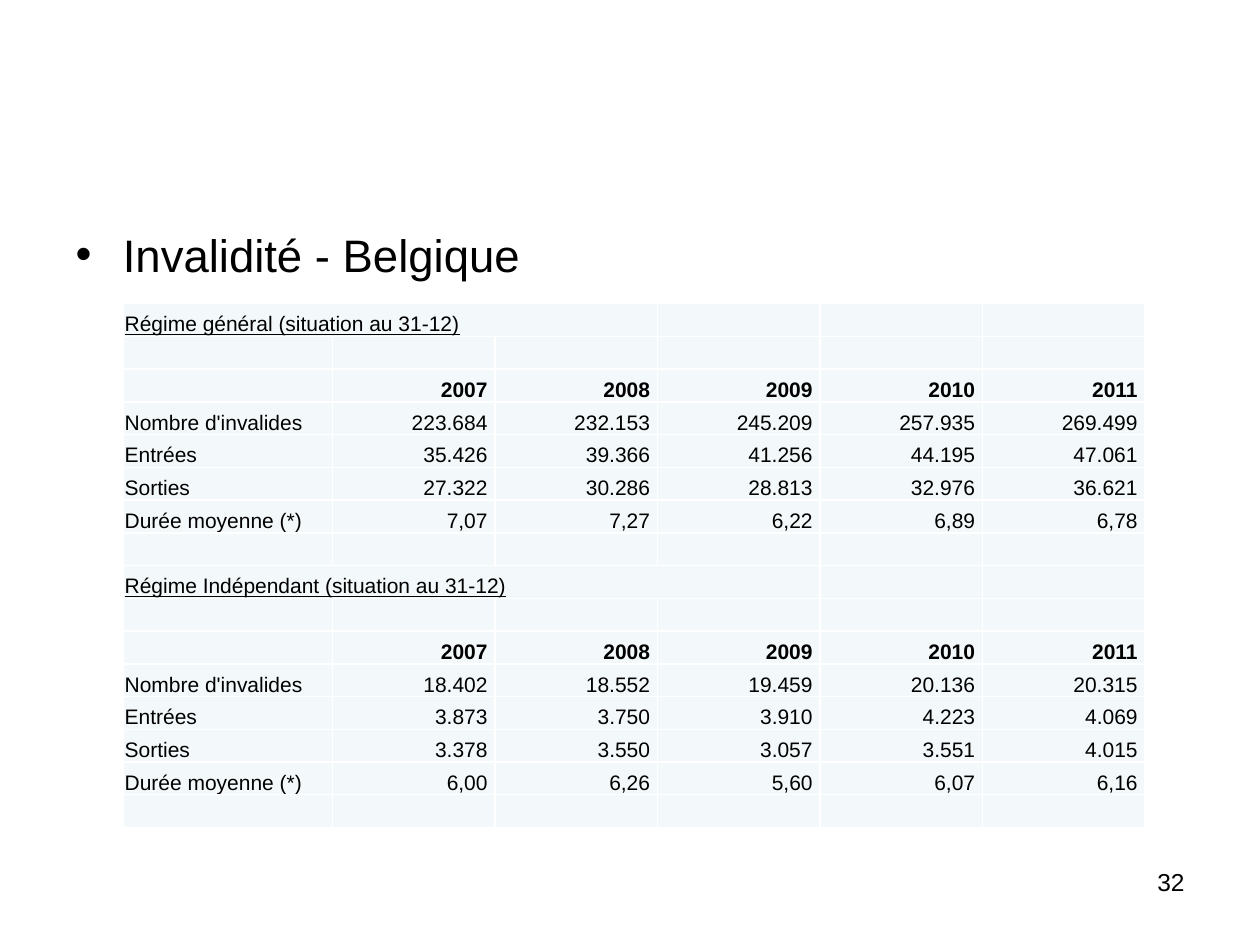
from lxml import etree
from pptx import Presentation
from pptx.dml.color import RGBColor
from pptx.enum.text import MSO_ANCHOR, PP_ALIGN
from pptx.oxml.ns import qn
from pptx.util import Inches, Pt

BLACK = RGBColor(0x00, 0x00, 0x00)
WHITE = RGBColor(0xFF, 0xFF, 0xFF)
PALE_BLUE = RGBColor(0xF3, 0xF9, 0xFA)
RIGHT = PP_ALIGN.RIGHT
BOTTOM = MSO_ANCHOR.BOTTOM
TITLE_AND_CONTENT = 1

FONT = "Arial"
TABLE_SIZE = 12
COLUMN_WIDTHS = [1.66] + [1.29] * 5
ROW_HEIGHT = 0.26
YEARS = ["2007", "2008", "2009", "2010", "2011"]
MEASURES = ["Nombre d'invalides", "Entrées", "Sorties", "Durée moyenne (*)"]

# Heading, number of columns the heading spans, one row of values per measure
SCHEMES = [
    ("Régime général (situation au 31-12)", 3, [
        ["223.684", "232.153", "245.209", "257.935", "269.499"],
        ["35.426", "39.366", "41.256", "44.195", "47.061"],
        ["27.322", "30.286", "28.813", "32.976", "36.621"],
        ["7,07", "7,27", "6,22", "6,89", "6,78"],
    ]),
    ("Régime Indépendant (situation au 31-12)", 4, [
        ["18.402", "18.552", "19.459", "20.136", "20.315"],
        ["3.873", "3.750", "3.910", "4.223", "4.069"],
        ["3.378", "3.550", "3.057", "3.551", "4.015"],
        ["6,00", "6,26", "5,60", "6,07", "6,16"],
    ]),
]
ROWS_PER_SCHEME = len(MEASURES) + 4  # heading, blank, years, measures, blank


def set_font(paragraph, size, bold=False, underline=False):
    font = paragraph.font
    font.name = FONT
    font.size = Pt(size)
    font.bold = bold
    font.underline = underline
    font.color.rgb = BLACK


def add_bullet_heading(slide, text):
    body = slide.placeholders[1]
    body.left, body.top = Inches(0.5), Inches(1.75)
    body.width, body.height = Inches(9), Inches(4.95)
    body.text_frame.text = text
    set_font(body.text_frame.paragraphs[0], 26)


def add_page_number(slide, text):
    box = slide.shapes.add_textbox(
        Inches(7.17), Inches(6.83), Inches(2.33), Inches(0.52))
    box.text_frame.word_wrap = True
    paragraph = box.text_frame.paragraphs[0]
    paragraph.text = text
    paragraph.alignment = RIGHT
    set_font(paragraph, 14)


def add_borders(cell):
    properties = cell._tc.get_or_add_tcPr()
    for side in ("a:lnL", "a:lnR", "a:lnT", "a:lnB"):
        line = etree.SubElement(properties, qn(side), w=str(Pt(1)))
        fill = etree.SubElement(line, qn("a:solidFill"))
        etree.SubElement(fill, qn("a:srgbClr"), val=str(WHITE))


def format_blank_cell(cell):
    """Border and fill a cell, with a text size that keeps empty rows low."""
    add_borders(cell)
    cell.fill.solid()
    cell.fill.fore_color.rgb = PALE_BLUE
    cell.vertical_anchor = BOTTOM
    cell.margin_left = cell.margin_right = cell.margin_top = Inches(0.01)
    cell.margin_bottom = 0
    etree.SubElement(cell.text_frame.paragraphs[0]._p, qn("a:endParaRPr"),
                     sz=str(TABLE_SIZE * 100))


def write_cell(cell, text, bold=False, underline=False):
    paragraph = cell.text_frame.paragraphs[0]
    paragraph.text = text
    set_font(paragraph, TABLE_SIZE, bold, underline)


def write_numbers(table, row, texts, bold=False):
    for column, text in enumerate(texts, start=1):
        cell = table.cell(row, column)
        cell.margin_right = Inches(0.06)
        write_cell(cell, text, bold)
        cell.text_frame.paragraphs[0].alignment = RIGHT


def write_scheme(table, top_row, heading, span, values):
    heading_cell = table.cell(top_row, 0)
    heading_cell.merge(table.cell(top_row, span - 1))
    write_cell(heading_cell, heading, underline=True)
    write_numbers(table, top_row + 2, YEARS, bold=True)
    for row, (measure, numbers) in enumerate(zip(MEASURES, values), top_row + 3):
        write_cell(table.cell(row, 0), measure)
        write_numbers(table, row, numbers)


def add_invalidity_table(slide):
    row_count = ROWS_PER_SCHEME * len(SCHEMES)
    table = slide.shapes.add_table(
        row_count, len(COLUMN_WIDTHS), Inches(0.98), Inches(2.41),
        Inches(sum(COLUMN_WIDTHS)), Inches(ROW_HEIGHT * row_count)).table
    table.first_row = table.horz_banding = False
    for column, width in zip(table.columns, COLUMN_WIDTHS):
        column.width = Inches(width)
    for row in table.rows:
        row.height = Inches(ROW_HEIGHT)
    for cell in table.iter_cells():
        format_blank_cell(cell)
    for index, scheme in enumerate(SCHEMES):
        write_scheme(table, index * ROWS_PER_SCHEME, *scheme)


def main():
    presentation = Presentation()
    presentation.slide_width = Inches(10)
    presentation.slide_height = Inches(7.5)
    layout = presentation.slide_layouts[TITLE_AND_CONTENT]
    slide = presentation.slides.add_slide(layout)
    title = slide.shapes.title.element
    title.getparent().remove(title)
    add_bullet_heading(slide, "Invalidité - Belgique")
    add_page_number(slide, "32")
    add_invalidity_table(slide)
    presentation.save("out.pptx")


if __name__ == "__main__":
    main()
